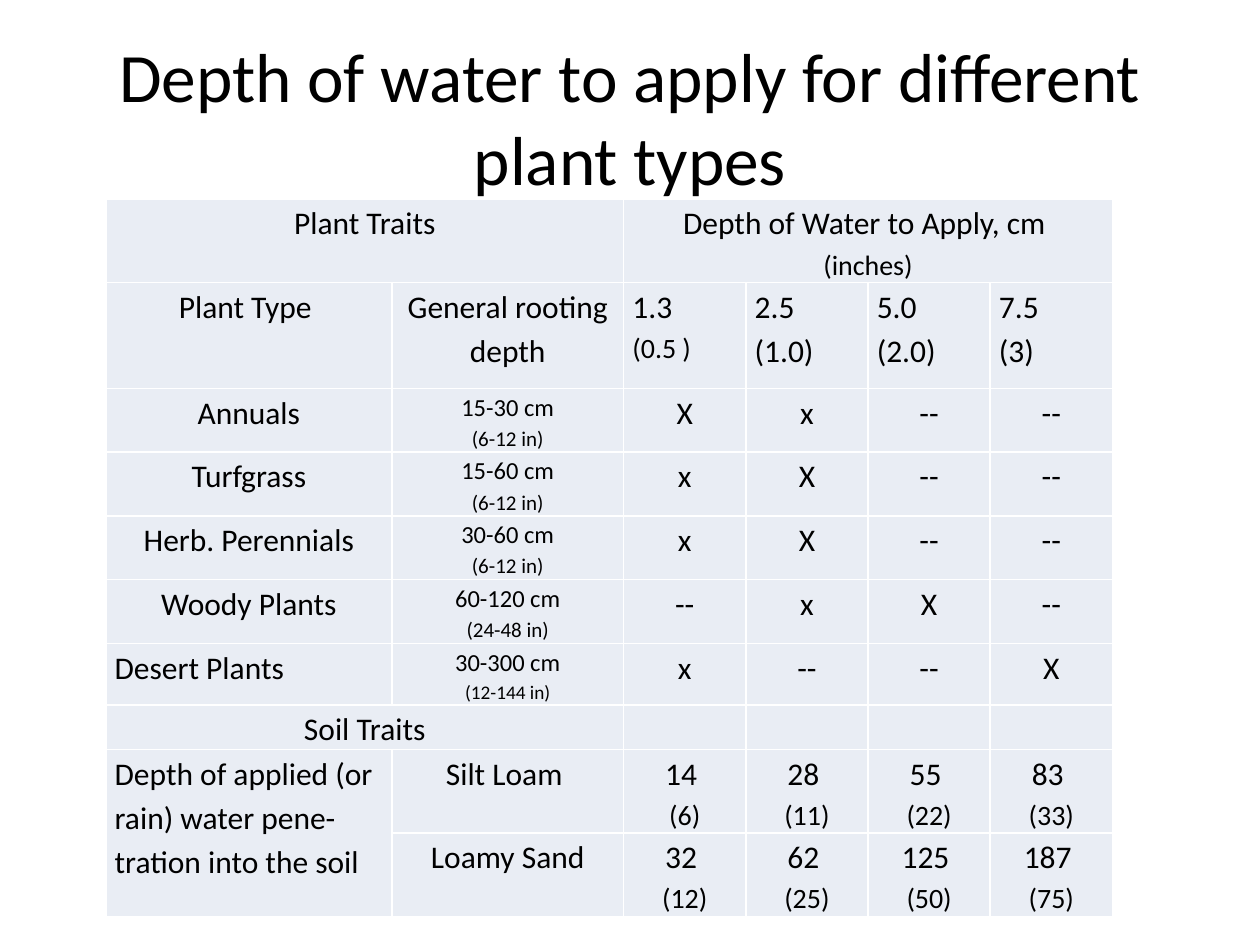
from dataclasses import dataclass

from lxml import etree
from pptx import Presentation
from pptx import util as u
from pptx.dml.color import RGBColor
from pptx.enum import text
from pptx.oxml import ns


@dataclass(frozen=True)
class Theme:
    font: str = "Calibri"
    ink: str = "000000"
    cell: str = "E9EDF4"
    border: str = "FFFFFF"
    border_pt: float = 1
    title: float = 39.6
    body: float = 18
    note: float = 16
    depth: float = 14
    depth_note: float = 12
    small_note: float = 11
    line_spacing: float = 1.15


@dataclass(frozen=True)
class Line:
    text: str
    size: float


@dataclass(frozen=True)
class Entry:
    """Lines of one cell, placed by column and row of the table grid."""
    col: int
    row: int
    lines: tuple[Line, ...]
    centred: bool = True
    cols: int = 1
    rows: int = 1


THEME = Theme()
WIDTH, HEIGHT = u.Inches(10), u.Inches(7.5)
COLUMNS = [2.27, 1.84] + [0.97] * 4
ROWS = [0.55, 0.84] + [0.46] * 5 + [0.27] + [0.55] * 2

# Plant type, rooting depth in cm and inches, mark for each water depth
PLANTS = [
    ("Annuals", "15-30", "6-12", ("X", "x", "--", "--")),
    ("Turfgrass", "15-60", "6-12", ("x", "X", "--", "--")),
    ("Herb. Perennials", "30-60", "6-12", ("x", "X", "--", "--")),
    ("Woody Plants", "60-120", "24-48", ("--", "x", "X", "--")),
    ("Desert Plants", "30-300", "12-144", ("x", "--", "--", "X")),
]
# Soil, penetration in cm and inches for each water depth
SOILS = [
    ("Silt Loam ", ((14, 6), (28, 11), (55, 22), (83, 33))),
    ("Loamy Sand", ((32, 12), (62, 25), (125, 50), (187, 75))),
]
WATER_DEPTHS = [("1.3", "(0.5 )"), ("2.5", "(1.0)"), ("5.0", "(2.0)"), ("7.5", "(3)")]


def body(words: str) -> Line:
    return Line(words, THEME.body)


def note(words: str) -> Line:
    return Line(words, THEME.note)


def table_entries() -> list[Entry]:
    # Headings
    entries = [
        Entry(0, 0, (body("Plant Traits"),), cols=2),
        Entry(2, 0, (body("Depth of Water to Apply, cm "), note("(inches)")), cols=4),
        Entry(0, 1, (body("Plant Type "),)),
        Entry(1, 1, (body("General rooting depth"),)),
    ]
    for i, (cm, inches) in enumerate(WATER_DEPTHS):
        second = note(inches) if i == 0 else body(inches)
        entries.append(Entry(2 + i, 1, (body(cm), second), centred=False))

    # Plants
    for row, (plant, cm, inches, marks) in enumerate(PLANTS, start=2):
        last = plant == "Desert Plants"
        small = THEME.small_note if last else THEME.depth_note
        entries.append(Entry(0, row, (body(plant),), centred=not last))
        entries.append(Entry(1, row, (Line(f"{cm} cm", THEME.depth),
                                      Line(f"({inches} in)", small))))
        entries += [Entry(col, row, (body(mark),)) for col, mark in enumerate(marks, start=2)]

    # Soils
    entries.append(Entry(0, 7, (body("Soil Traits"),), cols=2))
    entries.append(Entry(0, 8, (body("Depth of applied (or rain) water pene-tration into the soil"),),
                         centred=False, rows=2))
    for row, (soil, depths) in enumerate(SOILS, start=8):
        entries.append(Entry(1, row, (body(soil),)))
        entries += [Entry(col, row, (body(f"{cm} "), note(f"({inches})")))
                    for col, (cm, inches) in enumerate(depths, start=2)]
    return entries


def add_run(p, words: str, size: float) -> None:
    r = p.add_run()
    r.text = words
    r.font.name = THEME.font
    r.font.size = u.Pt(size)
    r.font.color.rgb = RGBColor.from_string(THEME.ink)


def style_cell(cell) -> None:
    cell.margin_left = cell.margin_right = u.Inches(0.07)
    cell.margin_top = cell.margin_bottom = 0
    tc_pr = cell._tc.get_or_add_tcPr()
    for side in ("a:lnL", "a:lnR", "a:lnT", "a:lnB"):
        line = etree.SubElement(tc_pr, ns.qn(side), w=str(u.Pt(THEME.border_pt)))
        fill = etree.SubElement(line, ns.qn("a:solidFill"))
        etree.SubElement(fill, ns.qn("a:srgbClr"), val=THEME.border)
    cell.fill.solid()
    cell.fill.fore_color.rgb = RGBColor.from_string(THEME.cell)


def write_entry(table, entry: Entry) -> None:
    cell = table.cell(entry.row, entry.col)
    if entry.cols > 1 or entry.rows > 1:
        cell.merge(table.cell(entry.row + entry.rows - 1, entry.col + entry.cols - 1))
    tf = cell.text_frame
    for i, line in enumerate(entry.lines):
        p = tf.add_paragraph() if i else tf.paragraphs[0]
        p.alignment = text.PP_ALIGN.CENTER if entry.centred else text.PP_ALIGN.LEFT
        p.line_spacing = THEME.line_spacing
        add_run(p, line.text, line.size)


def add_title(s, words: str) -> None:
    title = s.shapes.title
    title.left, title.top = int(WIDTH * 0.05), int(HEIGHT * 0.04)
    title.width, title.height = int(WIDTH * 0.9), u.Inches(1.25)
    tf = title.text_frame
    tf.word_wrap = True
    tf.auto_size = text.MSO_AUTO_SIZE.NONE
    tf.vertical_anchor = text.MSO_ANCHOR.MIDDLE
    p = tf.paragraphs[0]
    p.alignment = text.PP_ALIGN.CENTER
    add_run(p, words, THEME.title)


def add_depth_table(s) -> None:
    frame = s.shapes.add_table(len(ROWS), len(COLUMNS), u.Inches(0.84), u.Inches(1.58),
                               u.Inches(sum(COLUMNS)), u.Inches(sum(ROWS)))
    table = frame.table
    table.first_row = table.horz_banding = False
    for column, width in zip(table.columns, COLUMNS):
        column.width = u.Inches(width)
    for row, height in zip(table.rows, ROWS):
        row.height = u.Inches(height)
    for cell in table.iter_cells():
        style_cell(cell)
    for entry in table_entries():
        write_entry(table, entry)


def main() -> None:
    prs = Presentation()
    prs.slide_width, prs.slide_height = WIDTH, HEIGHT
    s = prs.slides.add_slide(prs.slide_layouts[5])
    add_title(s, "Depth of water to apply for different plant types")
    add_depth_table(s)
    prs.save("out.pptx")


if __name__ == "__main__":
    main()
